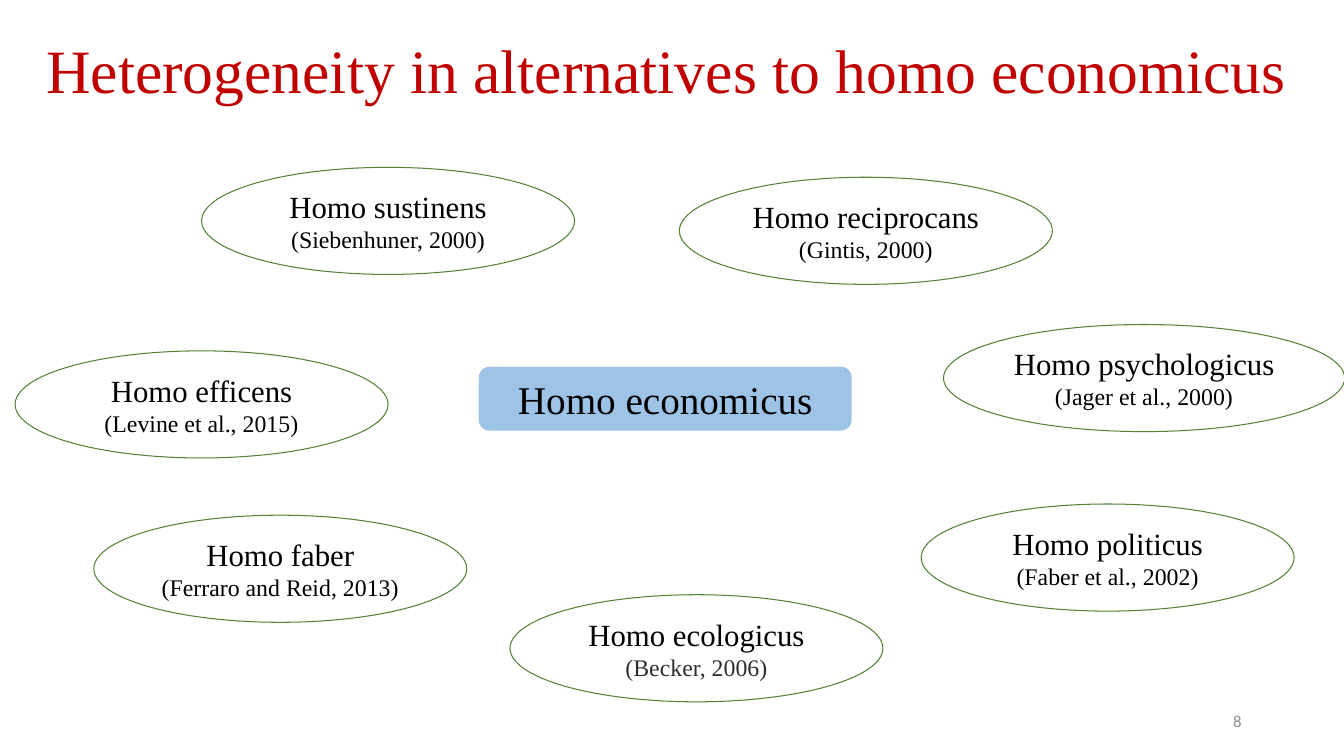
from pptx import Presentation, util as u
from pptx.dml.color import RGBColor
from pptx.enum import shapes, text

RED = RGBColor(0xC0, 0x00, 0x00)
BLUE = RGBColor(0x9D, 0xC3, 0xE6)
GREEN = RGBColor(0x54, 0x82, 0x35)
BLACK = RGBColor(0x00, 0x00, 0x00)
DARK = RGBColor(0x2E, 0x2E, 0x2E)
GREY = RGBColor(0x8C, 0x8C, 0x8C)
SERIF = "Times New Roman"
OVAL_W, OVAL_H = 266.4, 76.5

ALTERNATIVES = [
    ("Homo psychologicus", "(Jager et al., 2000)", 673.9, 231.8, 286.6, BLACK),
    ("Homo ecologicus", "(Becker, 2006)", 364.3, 424.8, OVAL_W, DARK),
    ("Homo reciprocans", "(Gintis, 2000)", 485.3, 126.6, OVAL_W, BLACK),
    ("Homo sustinens", "(Siebenhuner, 2000)", 144, 119.5, OVAL_W, BLACK),
    ("Homo politicus", "(Faber et al., 2002)", 658, 360, OVAL_W, BLACK),
    ("Homo faber", "(Ferraro and Reid, 2013)", 67, 368, OVAL_W, BLACK),
    ("Homo efficens", "(Levine et al., 2015)", 10.8, 250.6, OVAL_W, BLACK),
]


def style(p, size, color, align, font=SERIF):
    """Format a paragraph and its runs."""
    p.alignment = align
    for r in p.runs:
        r.font.size = u.Pt(size)
        r.font.name = font
        r.font.color.rgb = color


def add_label(s, box, wording, size, color, align, font=SERIF):
    """Place one line of middle-anchored text in a box."""
    tf = s.shapes.add_textbox(*map(u.Pt, box)).text_frame
    tf.word_wrap = True
    tf.vertical_anchor = text.MSO_ANCHOR.MIDDLE
    tf.text = wording
    style(tf.paragraphs[0], size, color, align, font)
    return tf


def add_figure(s, kind, box, lines):
    """Place a plain shape with centred lines of (wording, size, color)."""
    sp = s.shapes.add_shape(kind, *map(u.Pt, box))
    sp.shadow.inherit = False
    tf = sp.text_frame
    tf.word_wrap = True
    tf.vertical_anchor = text.MSO_ANCHOR.TOP
    tf.text = "\n".join(line[0] for line in lines)
    for p, (_, size, color) in zip(tf.paragraphs, lines):
        style(p, size, color, text.PP_ALIGN.CENTER)
    return sp


def add_centre(s, box):
    """Place the filled central concept."""
    sp = add_figure(s, shapes.MSO_SHAPE.ROUNDED_RECTANGLE, box,
                    [("Homo economicus", 28, BLACK)])
    sp.fill.solid()
    sp.fill.fore_color.rgb = BLUE
    sp.line.fill.background()


def add_alternative(s, box, name, source, source_color):
    """Place an outlined oval with a concept and its source."""
    sp = add_figure(s, shapes.MSO_SHAPE.OVAL, box,
                    [(name, 22, BLACK), (source, 17, source_color)])
    sp.fill.background()
    sp.line.color.rgb = GREEN
    sp.line.width = u.Pt(0.75)


def main():
    """Build and save the slide."""
    prs = Presentation()
    prs.slide_width, prs.slide_height = u.Pt(960), u.Pt(540)
    s = prs.slides.add_slide(prs.slide_layouts[6])
    title = add_label(s, (26, 0, 925, 104.4),
                      "Heterogeneity in alternatives to homo economicus",
                      44, RED, text.PP_ALIGN.LEFT)
    title.paragraphs[0].line_spacing = 0.9
    add_centre(s, (342, 262, 266.4, 45.5))
    for name, source, x, y, w, color in ALTERNATIVES:
        add_alternative(s, (x, y, w, OVAL_H), name, source, color)
    add_label(s, (678, 500.5, 216, 28.8), "8", 12, GREY,
              text.PP_ALIGN.RIGHT, "Calibri")
    prs.save("out.pptx")


if __name__ == "__main__":
    main()
